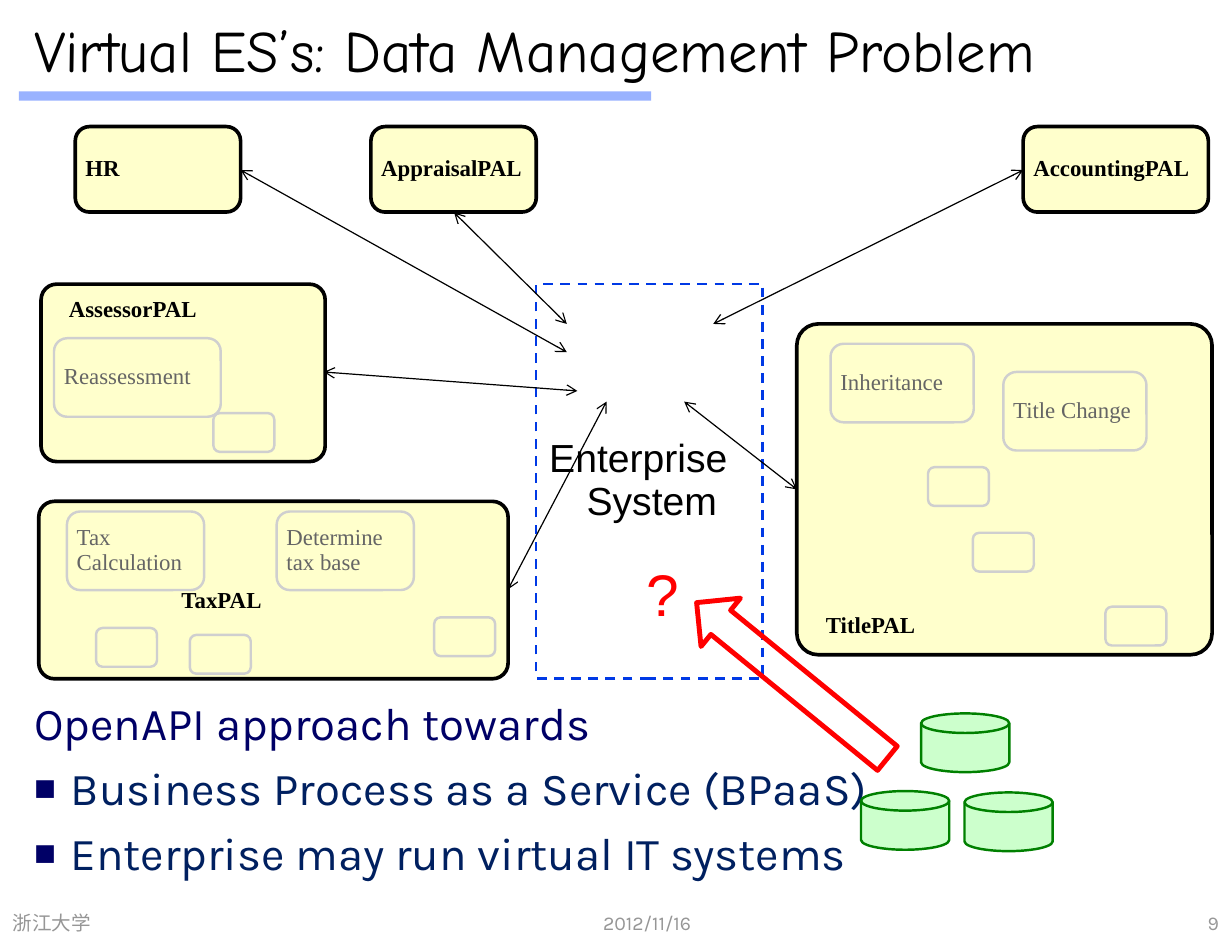
from dataclasses import dataclass
from typing import Any

from lxml.etree import SubElement
from pptx import Presentation
from pptx.dml.color import RGBColor
from pptx.enum.dml import MSO_LINE
from pptx.enum.shapes import MSO_CONNECTOR, MSO_SHAPE
from pptx.enum.text import MSO_ANCHOR, MSO_AUTO_SIZE, PP_ALIGN
from pptx.oxml.ns import qn
from pptx.util import Cm, Pt


@dataclass
class Look:
    """Fill, line colour and line width of a shape."""
    fill: str | None
    line: str | None = None
    width: float = 1.5


@dataclass
class Type:
    """Font, size, colour and weight of text."""
    name: str
    size: float
    hue: str
    bold: bool = False


@dataclass
class Box:
    """Place of a part in centimetres, with its text."""
    left: float
    top: float
    width: float
    height: float
    text: str = ""
    curve: float | None = None


PANEL = Look("FFFFCC", "000000", 2.25)
STEP = Look("FFFFCC", "CFCFCF")
DISK = Look("CCFFCC", "008000")
HEAD = Type("Comic Neue", 36, "000000")
LEAD = Type("Karla", 28, "000066")
ITEM = Type("Karla", 28, "002060")
FOOT = Type("Karla", 12, "969696")
NAME = Type("Times New Roman", 14, "000000", True)
TASK = Type("Times New Roman", 14, "656565")
CORE = Type("Arial", 24, "000000")
MARK = Type("Arial", 36, "FF0000")

WIDE = {"margin_left": Cm(0.28), "margin_right": Cm(0.28),
        "margin_top": Cm(0.13), "margin_bottom": Cm(0.13),
        "word_wrap": True, "auto_size": MSO_AUTO_SIZE.NONE}
MID = WIDE | {"vertical_anchor": MSO_ANCHOR.MIDDLE}
SLIM = MID | {"margin_left": Cm(0.13), "margin_right": Cm(0.13)}
FREE = {"word_wrap": False, "auto_size": MSO_AUTO_SIZE.SHAPE_TO_FIT_TEXT}
TIGHT = {"line_spacing": 0.9, "alignment": PP_ALIGN.LEFT}

PANELS = [Box(0.84, 10.85, 10.16, 3.84, curve=0.088),
          Box(17.25, 7.01, 8.99, 7.16, curve=0.065),
          Box(0.89, 6.15, 6.15, 3.84, curve=0.088)]
STEPS = [Box(1.45, 11.07, 2.97, 1.7, "Tax Calculation"),
         Box(1.17, 7.32, 3.61, 1.7, "Reassessment"),
         Box(21.72, 8.05, 3.1, 1.7, "Title Change"),
         Box(17.98, 7.44, 3.1, 1.7, "Inheritance"),
         Box(5.99, 11.07, 2.97, 1.7, "Determine tax base")]
SPOTS = [(21.06, 11.53), (23.93, 13.13), (20.09, 10.11), (4.62, 8.94),
         (2.08, 13.59), (4.11, 13.74), (9.4, 13.36)]
PALS = [Box(8.03, 2.74, 3.58, 1.85, "AppraisalPAL"),
        Box(1.63, 2.74, 3.58, 1.85, "HR"),
        Box(22.15, 2.74, 4.01, 1.85, "AccountingPAL")]
LABELS = [Box(3.68, 12.62, 2.26, 0.79, "TaxPAL"),
          Box(17.63, 13.16, 2.46, 0.79, "TitlePAL"),
          Box(1.24, 6.32, 3.3, 0.79, "AssessorPAL")]
LINKS = [(9.83, 4.6, 12.27, 7.01), (5.21, 3.68, 12.27, 7.62),
         (7.01, 8.05, 12.5, 8.46), (14.81, 8.69, 17.25, 10.59),
         (15.44, 7.01, 22.15, 3.68)]
DISKS = [(19.94, 15.44), (20.88, 17.15), (18.64, 17.12)]
FEET = [(Box(11.23, 19.63, 5.56, 0.69, "2012/11/16"), PP_ALIGN.CENTER),
        (Box(0, 19.63, 8.46, 0.69, "浙江大学"), PP_ALIGN.LEFT),
        (Box(21.11, 19.63, 5.56, 0.69, "9"), PP_ALIGN.RIGHT)]
POINTS = ["Business Process as a Service (BPaaS)",
          "Enterprise may run virtual IT systems"]


def hue(code: str) -> RGBColor:
    """Turn a hex string into a colour."""
    return RGBColor.from_string(code)


def apply(part: Any, form: dict[str, Any]) -> None:
    """Set each format value on a part."""
    for key, value in form.items():
        setattr(part, key, value)


def place(box: Box) -> list[Cm]:
    """Give the place of a box as lengths."""
    return [Cm(n) for n in (box.left, box.top, box.width, box.height)]


def write(para: Any, text: str, kind: Type, form: dict[str, Any]) -> None:
    """Write one formatted paragraph."""
    run = para.add_run()
    run.text = text
    apply(run.font, {"name": kind.name, "size": Pt(kind.size), "bold": kind.bold})
    run.font.color.rgb = hue(kind.hue)
    apply(para, form)


def draw(slide: Any, shape: MSO_SHAPE, box: Box, look: Look,
         kind: Type = TASK) -> Any:
    """Draw a preset shape with its text."""
    part = slide.shapes.add_shape(shape, *place(box))
    part.shadow.inherit = False
    if look.fill:
        part.fill.solid()
        part.fill.fore_color.rgb = hue(look.fill)
    else:
        part.fill.background()
    if look.line:
        part.line.color.rgb = hue(look.line)
        part.line.width = Pt(look.width)
    else:
        part.line.fill.background()
    if box.curve:
        part.adjustments[0] = box.curve
    if box.text:
        apply(part.text_frame, SLIM)
        write(part.text_frame.paragraphs[0], box.text, kind, TIGHT)
    return part


def label(slide: Any, box: Box, kind: Type, frame: dict[str, Any],
          form: dict[str, Any]) -> None:
    """Place free text."""
    part = slide.shapes.add_textbox(*place(box))
    apply(part.text_frame, frame)
    write(part.text_frame.paragraphs[0], box.text, kind, form)


def link(slide: Any, ends: tuple[float, ...]) -> None:
    """Draw a line with an arrowhead at both ends."""
    part = slide.shapes.add_connector(MSO_CONNECTOR.STRAIGHT, *map(Cm, ends))
    part.line.color.rgb = hue("000000")
    part.line.width = Pt(0.75)
    for tag in ("a:headEnd", "a:tailEnd"):
        SubElement(part.line._get_or_add_ln(), qn(tag), type="arrow")
    SubElement(part._element.spPr, qn("a:effectLst"))


def indent(para: Any, left: float, hang: float) -> Any:
    """Set the indents in centimetres and give the paragraph format."""
    form = para._p.get_or_add_pPr()
    form.set("marL", str(Cm(left)))
    form.set("indent", str(Cm(hang)))
    return form


def fill_title(part: Any) -> None:
    """Write the slide title."""
    apply(part, dict(zip(("left", "top", "width", "height"),
                         place(Box(0.46, 0, 25.78, 2.11)))))
    apply(part.text_frame, MID)
    write(part.text_frame.paragraphs[0], "Virtual ES’s: Data Management Problem",
          HEAD, {"alignment": PP_ALIGN.LEFT})


def fill_body(part: Any) -> None:
    """Write the lead line and its bullets."""
    apply(part, dict(zip(("left", "top", "width", "height"),
                         place(Box(0.46, 14.91, 25.78, 4.57)))))
    frame = part.text_frame
    apply(frame, WIDE)
    lead = frame.paragraphs[0]
    write(lead, "OpenAPI approach towards", LEAD, {"space_before": Pt(0)})
    SubElement(indent(lead, 0, 0), qn("a:buNone"))
    for text in POINTS:
        para = frame.add_paragraph()
        write(para, text, ITEM, {"space_before": Pt(6.3)})
        form = indent(para, 0.79, -0.79)
        SubElement(SubElement(form, qn("a:buClr")), qn("a:srgbClr"), val="000066")
        SubElement(form, qn("a:buSzPct"), val="80000")
        SubElement(form, qn("a:buChar"), char="■")


def main() -> None:
    """Build the slide and save it."""
    deck = Presentation()
    apply(deck, {"slide_width": Cm(26.67), "slide_height": Cm(20.32)})
    slide = deck.slides.add_slide(deck.slide_layouts[1])
    fill_title(slide.shapes.title)
    fill_body(slide.placeholders[1])
    draw(slide, MSO_SHAPE.RECTANGLE, Box(0.41, 1.98, 13.69, 0.2), Look("99B2FF"))
    link(slide, (11, 12.75, 13.13, 8.69))
    blanks = [Box(x, y, 1.32, 0.84) for x, y in SPOTS]
    for group, look, kind in ((PANELS, PANEL, NAME), (STEPS + blanks, STEP, TASK),
                              (PALS, PANEL, NAME)):
        for box in group:
            draw(slide, MSO_SHAPE.ROUNDED_RECTANGLE, box, look, kind)
    core = draw(slide, MSO_SHAPE.RECTANGLE,
                Box(11.61, 6.15, 4.9, 8.53, "Enterprise System"),
                Look(None, "0039E5"), CORE)
    core.line.dash_style = MSO_LINE.DASH
    apply(core.text_frame, MID)
    indent(core.text_frame.paragraphs[0], 0.81, -0.81)
    for box in LABELS:
        label(slide, box, NAME, FREE, TIGHT)
    for ends in LINKS:
        link(slide, ends)
    for x, y in DISKS:
        draw(slide, MSO_SHAPE.FLOWCHART_MAGNETIC_DISK, Box(x, y, 1.91, 1.27), DISK)
    arrow = draw(slide, MSO_SHAPE.RIGHT_ARROW, Box(14.48, 14.05, 5.33, 1.35),
                 Look(None, "FF0000", 3))
    arrow.rotation = 219.2
    label(slide, Box(13.74, 12.12, 1.22, 1.65, "?"), MARK, FREE, TIGHT)
    for box, side in FEET:
        label(slide, box, FOOT, MID, {"alignment": side})
    deck.save("out.pptx")


if __name__ == "__main__":
    main()
